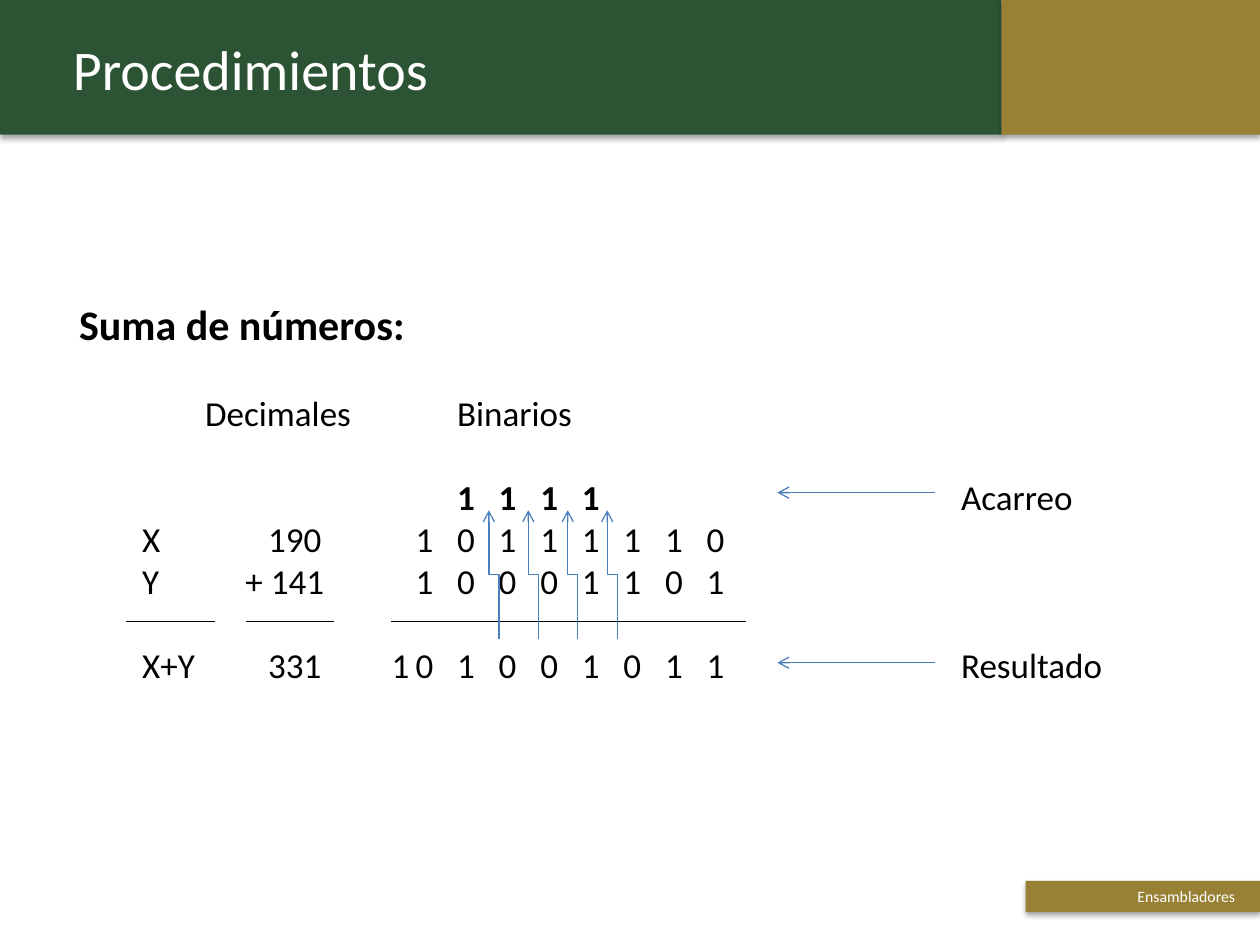
"""Build the slide on adding decimal and binary numbers."""
from typing import NamedTuple

import lxml.etree
import pptx
import pptx.dml.color
import pptx.enum.shapes
import pptx.enum.text
import pptx.oxml.ns
import pptx.util

Inches = pptx.util.Inches
Pt = pptx.util.Pt
qn = pptx.oxml.ns.qn
ALIGN = pptx.enum.text.PP_ALIGN
ANCHOR = pptx.enum.text.MSO_ANCHOR
CONNECTOR = pptx.enum.shapes.MSO_CONNECTOR

FONT = "Calibri"
COLORS = {"green": "2D5335", "gold": "988034", "white": "FFFFFF",
          "black": "000000", "blue": "4B7EBC"}
DIGIT_START, DIGIT_PITCH = 2.67, 0.33
CARRY_STOP, NOTE_STOP = 2.48, 7.0
RULE_Y = 4.93


class Band(NamedTuple):
    left: float
    top: float
    width: float
    height: float
    color: str


class Line(NamedTuple):
    left: float
    right: float
    y: float


class Entry(NamedTuple):
    stop: float
    text: str
    bold: bool = False


class Row(NamedTuple):
    entries: list[Entry]
    size: int = 20
    space_before: int = 0


def digits(text: str, first: int = 0, bold: bool = False) -> list[Entry]:
    return [Entry(DIGIT_START + DIGIT_PITCH * (first + index), digit, bold)
            for index, digit in enumerate(text)]


BANDS = [
    Band(0, 0, 7.95, 1.07, "green"),
    Band(7.95, 0, 2.05, 1.07, "gold"),
    Band(8.14, 6.99, 1.86, 0.25, "gold"),
]
RULES = [Line(1, 1.71, RULE_Y), Line(1.95, 2.65, RULE_Y), Line(3.1, 5.92, RULE_Y)]
POINTERS = [Line(6.17, 7.42, 3.91), Line(6.17, 7.42, 5.26)]
ROWS = [
    Row([Entry(0, "Suma de números:", True)], size=24),
    Row([Entry(1, "Decimales"), Entry(3, "Binarios")], space_before=24),
    Row([*digits("1111", 1, True), Entry(NOTE_STOP, "Acarreo")], space_before=24),
    Row([Entry(0.5, "X"), Entry(1.5, "190"), *digits("10111110")]),
    Row([Entry(0.5, "Y"), Entry(1.32, "+ 141"), *digits("10001101")]),
    Row([Entry(0.5, "X+Y"), Entry(1.5, "331"), Entry(CARRY_STOP, "1"),
         *digits("01001011"), Entry(NOTE_STOP, "Resultado")], space_before=24),
]


def rgb(name: str) -> pptx.dml.color.RGBColor:
    return pptx.dml.color.RGBColor.from_string(COLORS[name])


def style_font(font, size: int, color: str, bold: bool = False) -> None:
    font.name, font.size, font.bold = FONT, Pt(size), bold
    font.color.rgb = rgb(color)


def add_band(page, band: Band) -> None:
    shape = page.shapes.add_shape(
        pptx.enum.shapes.MSO_SHAPE.RECTANGLE, Inches(band.left), Inches(band.top),
        Inches(band.width), Inches(band.height))
    shape.fill.solid()
    shape.fill.fore_color.rgb = rgb(band.color)
    shape.line.fill.background()
    shape.shadow.inherit = False
    effects = shape._element.spPr.find(qn("a:effectLst"))
    shadow = lxml.etree.SubElement(
        effects, qn("a:outerShdw"), blurRad=str(Pt(3.1)), dist=str(Pt(1.8)),
        dir="5400000", rotWithShape="0")
    shade = lxml.etree.SubElement(shadow, qn("a:srgbClr"), val=COLORS["black"])
    lxml.etree.SubElement(shade, qn("a:alpha"), val="35000")


def add_box(page, left: float, top: float, width: float, height: float):
    box = page.shapes.add_textbox(Inches(left), Inches(top), Inches(width), Inches(height))
    box.text_frame.word_wrap = True
    return box.text_frame


def add_label(page, frame, text: str, size: int, align) -> None:
    frame.text = text
    para = frame.paragraphs[0]
    para.alignment = align
    style_font(para.runs[0].font, size, "white")


def fill_row(para, row: Row) -> None:
    para.space_before = Pt(row.space_before)
    tabs = lxml.etree.SubElement(para._p.get_or_add_pPr(), qn("a:tabLst"))
    for entry in row.entries:
        span = para.add_run()
        span.text = entry.text
        if entry.stop:
            span.text = "\t" + entry.text
            lxml.etree.SubElement(tabs, qn("a:tab"), pos=str(Inches(entry.stop)), algn="l")
        style_font(span.font, row.size, "black", entry.bold)


def style_line(connector, color: str, arrow: bool) -> None:
    connector.line.color.rgb = rgb(color)
    connector.line.width = Pt(0.75)
    properties = connector._element.spPr
    if arrow:
        lxml.etree.SubElement(properties.find(qn("a:ln")), qn("a:tailEnd"), type="arrow")
    lxml.etree.SubElement(properties, qn("a:effectLst"))


def add_line(page, line: Line, color: str, arrow: bool = False) -> None:
    connector = page.shapes.add_connector(
        CONNECTOR.STRAIGHT, Inches(line.right), Inches(line.y),
        Inches(line.left), Inches(line.y))
    style_line(connector, color, arrow)


def add_carry_arrow(page, center: float) -> None:
    middle, length, offset = 4.56, 1.02, 0.08
    connector = page.shapes.add_connector(
        CONNECTOR.ELBOW, Inches(center - length / 2), Inches(middle + offset / 2),
        Inches(center + length / 2), Inches(middle - offset / 2))
    connector._element.spPr.find(qn("a:xfrm")).set("rot", "16200000")
    style_line(connector, "blue", True)


def main() -> None:
    deck = pptx.Presentation()
    deck.slide_width, deck.slide_height = Inches(10), Inches(7.5)
    page = deck.slides.add_slide(deck.slide_layouts[6])
    for band in BANDS:
        add_band(page, band)

    title = add_box(page, 0.48, -0.14, 6.68, 1.36)
    title.vertical_anchor = ANCHOR.MIDDLE
    add_label(page, title, "Procedimientos", 32, ALIGN.LEFT)
    add_label(page, add_box(page, 5.86, 6.99, 4.04, 0.25), "Ensambladores", 9, ALIGN.RIGHT)

    sums = add_box(page, 0.53, 1.31, 8.83, 4.68)
    sums.margin_top = Inches(1.06)
    for index, row in enumerate(ROWS):
        fill_row(sums.add_paragraph() if index else sums.paragraphs[0], row)

    for rule in RULES:
        add_line(page, rule, "black")
    for pointer in POINTERS:
        add_line(page, pointer, "blue", arrow=True)
    for index in range(4):
        add_carry_arrow(page, 3.92 + 0.313 * index)
    deck.save("out.pptx")


if __name__ == "__main__":
    main()
